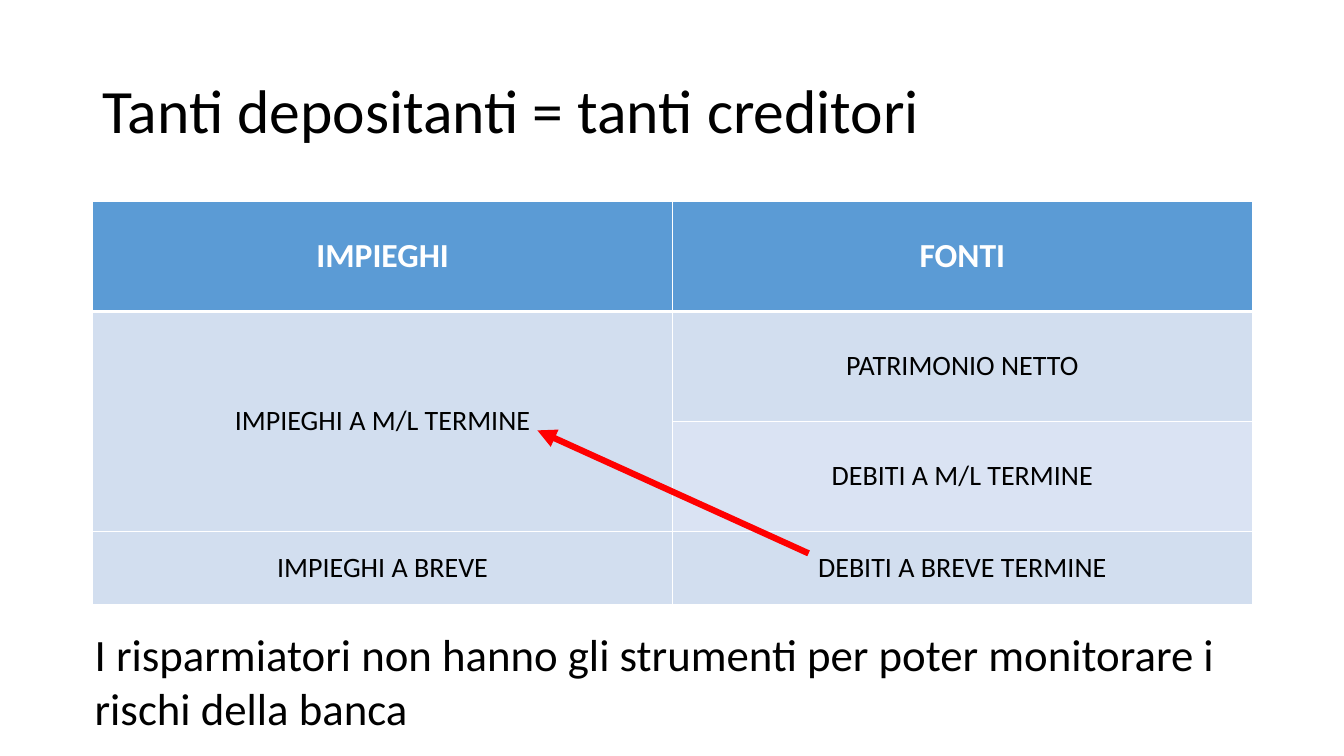
from lxml import etree
from pptx import Presentation
from pptx import util as u
from pptx.dml.color import RGBColor
from pptx.enum import shapes, text
from pptx.oxml import ns

PX = 9144  # 100 px to the inch
HUES = {"head": "5B9BD5", "band": "D2DEEF", "pale": "DAE3F3",
        "white": "FFFFFF", "black": "000000", "arrow": "FF0000"}


def write(frame, words, size, hue="black", bold=False, align=text.PP_ALIGN.LEFT):
    """Fill a text frame with one formatted paragraph and return it."""
    para = frame.paragraphs[0]
    para.alignment = align
    run = para.add_run()
    run.text = words
    look = {"name": "Calibri", "size": u.Pt(size), "bold": bold}
    for key, value in look.items():
        setattr(run.font, key, value)
    run.font.color.rgb = RGBColor.from_string(HUES[hue])
    return para


def edge(cell, side, width):
    """Draw a white border on one side of a table cell."""
    line = etree.SubElement(cell._tc.get_or_add_tcPr(), ns.qn(f"a:ln{side}"),
                            w=str(u.Pt(width)))
    fill = etree.SubElement(line, ns.qn("a:solidFill"))
    etree.SubElement(fill, ns.qn("a:srgbClr"), val=HUES["white"])


deck = Presentation()
deck.slide_width, deck.slide_height = 1333 * PX, 750 * PX
slide = deck.slides.add_slide(deck.slide_layouts[6])

# Balance sheet
rows = [
    (109, "head", ["IMPIEGHI", "FONTI"]),
    (109, "band", ["IMPIEGHI A M/L TERMINE", "PATRIMONIO NETTO"]),
    (109, "pale", ["", "DEBITI A M/L TERMINE"]),
    (73, "band", ["IMPIEGHI A BREVE", "DEBITI A BREVE TERMINE"]),
]
tall = sum(row[0] for row in rows)
sheet = slide.shapes.add_table(len(rows), 2, 92 * PX, 200 * PX,
                               1150 * PX, tall * PX).table
sheet.cell(1, 0).merge(sheet.cell(2, 0))
for r, (height, hue, names) in enumerate(rows):
    sheet.rows[r].height = height * PX
    head = r == 0
    for c, name in enumerate(names):
        cell = sheet.cell(r, c)
        for side in "LRTB":
            thick = (head and side == "B") or (r == 1 and side == "T")
            edge(cell, side, 3 if thick else 1)
        cell.fill.solid()
        cell.fill.fore_color.rgb = RGBColor.from_string(HUES[hue])
        cell.vertical_anchor = text.MSO_ANCHOR.MIDDLE
        if name:
            write(cell.text_frame, name, 24 if head else 20,
                  "white" if head else "black", head, text.PP_ALIGN.CENTER)

# Arrow from short-term debts to long-term assets
arrow = slide.shapes.add_connector(shapes.MSO_CONNECTOR.STRAIGHT,
                                   802 * PX, 549 * PX, 533 * PX, 427 * PX)
arrow.line.color.rgb = RGBColor.from_string(HUES["arrow"])
arrow.line.width = u.Pt(4.5)
etree.SubElement(arrow.line._get_or_add_ln(), ns.qn("a:tailEnd"), type="triangle")
etree.SubElement(arrow._element.spPr, ns.qn("a:effectLst"))

# Title and closing remark
title = slide.shapes.add_textbox(92 * PX, 40 * PX, 1150 * PX, 145 * PX).text_frame
title.word_wrap = True
title.vertical_anchor = text.MSO_ANCHOR.MIDDLE
write(title, "Tanti depositanti = tanti creditori", 44).line_spacing = 0.9

note = slide.shapes.add_textbox(84 * PX, 617 * PX, 1159 * PX, 118 * PX).text_frame
note.word_wrap = True
note.auto_size = text.MSO_AUTO_SIZE.SHAPE_TO_FIT_TEXT
write(note, "I risparmiatori non hanno gli strumenti per poter monitorare i "
            "rischi della banca", 32)

deck.save("out.pptx")
